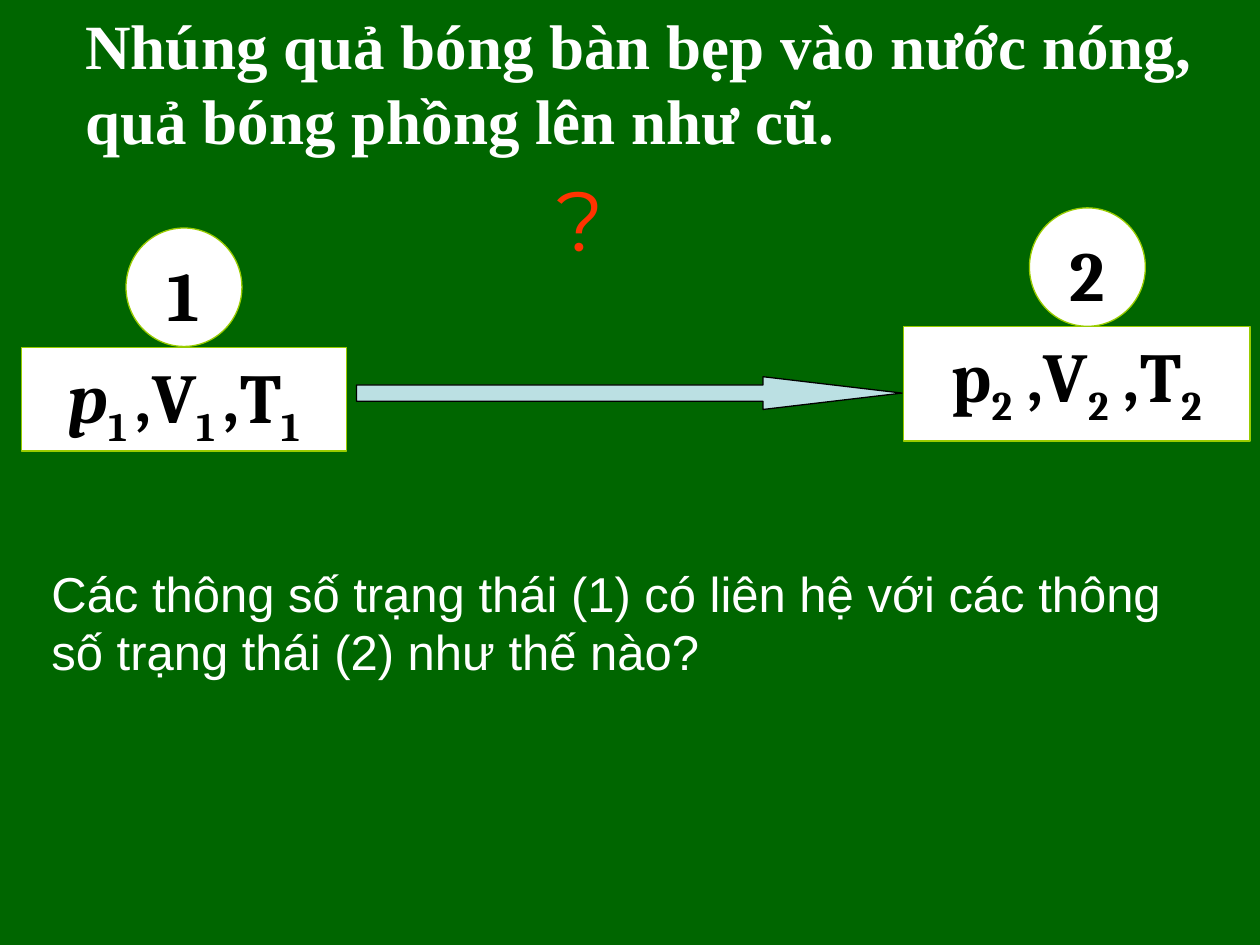
from lxml import etree
from pptx import Presentation
from pptx.dml.color import RGBColor
from pptx.enum.shapes import MSO_SHAPE
from pptx.enum.text import MSO_ANCHOR, PP_ALIGN
from pptx.oxml.ns import qn
from pptx.util import Inches, Pt

RECTANGLE, OVAL, ARROW = MSO_SHAPE.RECTANGLE, MSO_SHAPE.OVAL, MSO_SHAPE.RIGHT_ARROW
TOP, LEFT, CENTER = MSO_ANCHOR.TOP, PP_ALIGN.LEFT, PP_ALIGN.CENTER

GREEN = RGBColor(0x00, 0x66, 0x00)
LIME = RGBColor(0x99, 0xCC, 0x00)
PALE_BLUE = RGBColor(0xBB, 0xE0, 0xE3)
RED = RGBColor(0xFF, 0x33, 0x00)
GREY = RGBColor(0xB2, 0xB2, 0xB2)
WHITE = RGBColor(0xFF, 0xFF, 0xFF)
BLACK = RGBColor(0x00, 0x00, 0x00)

TITLE = {"name": "Times New Roman", "size": Pt(36), "bold": True}
STATE = {"name": "Cambria", "size": Pt(40), "bold": True}
MARK = {"name": "Montserrat", "size": Pt(48)}
QUESTION = {"name": "Arial", "size": Pt(28)}


def add_span(para, text, style, color, subscript=False):
    span = para.add_run()
    span.text = text
    for key, value in style.items():
        setattr(span.font, key, value)
    span.font.color.rgb = color
    if subscript:
        span.font._element.set("baseline", "-25000")
    return span


def outline_span(span, color, width):
    """Draw a thin line around the letters."""
    line = etree.Element(qn("a:ln"), w=str(width))
    fill = etree.SubElement(line, qn("a:solidFill"))
    etree.SubElement(fill, qn("a:srgbClr"), val=str(color))
    span.font._element.insert(0, line)


def add_text(page, place, text, style, color, align=LEFT, wrap=True):
    box = page.shapes.add_textbox(*map(Inches, place))
    box.text_frame.word_wrap = wrap
    para = box.text_frame.paragraphs[0]
    para.alignment = align
    return add_span(para, text, style, color)


def add_figure(page, kind, place, fill, line):
    shape = page.shapes.add_shape(kind, *map(Inches, place))
    shape.shadow.inherit = False
    shape.fill.solid()
    shape.fill.fore_color.rgb = fill
    shape.line.color.rgb = line
    shape.line.width = Pt(0.75)
    return shape


def add_label(page, kind, place, spans):
    """White lime-edged shape; spans are (text, subscript, italic)."""
    shape = add_figure(page, kind, place, WHITE, LIME)
    shape.text_frame.vertical_anchor = TOP
    para = shape.text_frame.paragraphs[0]
    para.alignment = CENTER
    for text, subscript, italic in spans:
        add_span(para, text, {**STATE, "italic": italic}, BLACK, subscript)


def add_state(page, number, box_place, circle_place, spans):
    add_label(page, RECTANGLE, box_place, spans)
    add_label(page, OVAL, circle_place, [(number, False, False)])


def main():
    deck = Presentation()
    deck.slide_width, deck.slide_height = Inches(10), Inches(7.5)
    page = deck.slides.add_slide(deck.slide_layouts[6])
    page.background.fill.solid()
    page.background.fill.fore_color.rgb = GREEN

    # Title
    add_text(page, (0.58, 0, 9.25, 1.3),
             "Nhúng quả bóng bàn bẹp vào nước nóng, quả bóng phồng lên như cũ.",
             TITLE, WHITE)

    # The two states
    add_state(page, "1", (0.17, 2.76, 2.58, 0.82), (1, 1.81, 0.92, 0.94),
              [("p", False, True), ("1 ", True, False), (",V", False, False),
               ("1 ", True, False), (",T", False, False), ("1", True, False)])
    add_state(page, "2", (7.17, 2.59, 2.75, 0.91), (8.17, 1.65, 0.92, 0.94),
              [("p", False, False), ("2", True, False), (" ,V", False, False),
               ("2", True, False), (" ,T", False, False), ("2", True, False)])

    # Change from state 1 to state 2
    arrow = add_figure(page, ARROW, (2.83, 2.99, 4.33, 0.26), PALE_BLUE, BLACK)
    arrow.adjustments[0] = 0.5
    arrow.adjustments[1] = 4.245
    mark = add_text(page, (4.08, 1.28, 1.06, 1.47), "?", MARK, RED, CENTER, wrap=False)
    outline_span(mark, GREY, Pt(1))

    # Question
    add_text(page, (0.31, 4.42, 9.38, 1.04),
             "Các thông số trạng thái (1) có liên hệ với các thông số trạng thái (2) "
             "như thế nào?", QUESTION, WHITE)

    deck.save("out.pptx")


if __name__ == "__main__":
    main()
